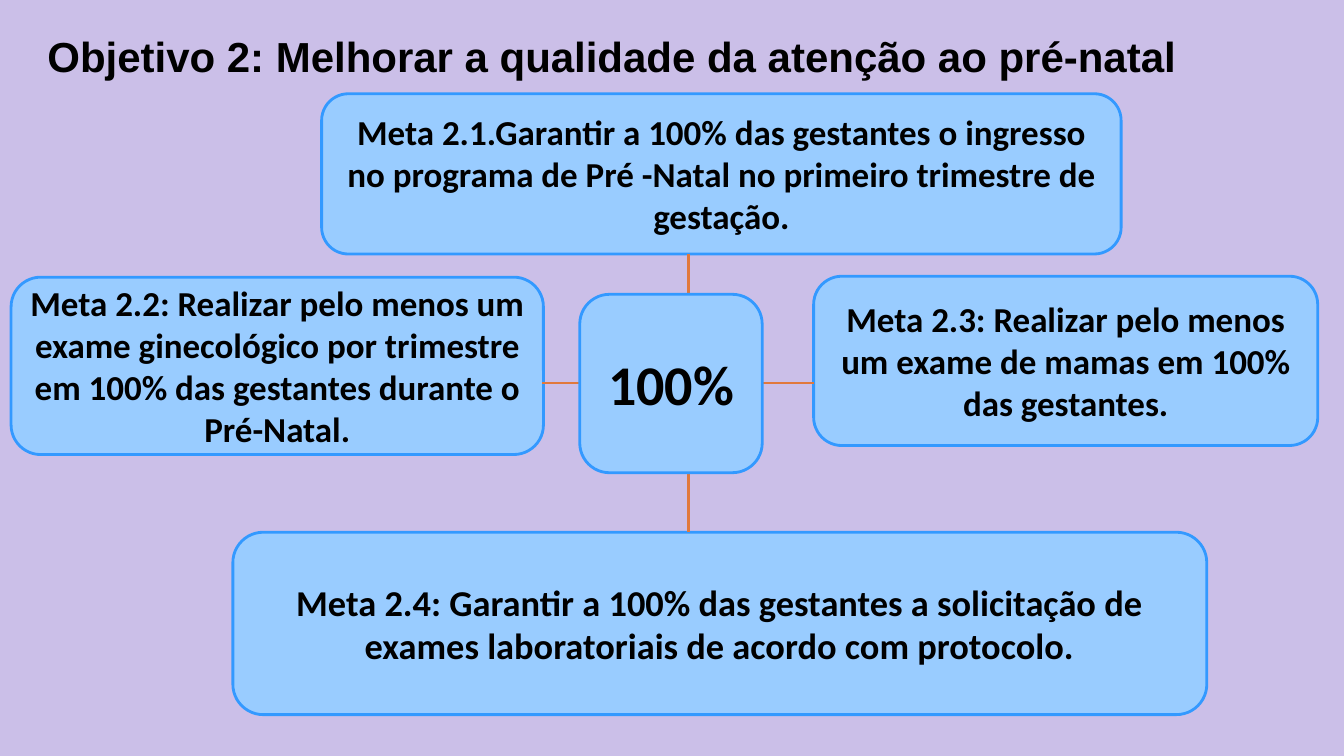
import pptx
import pptx.dml.color
import pptx.enum.shapes
import pptx.enum.text
import pptx.oxml.ns
import pptx.util
from lxml import etree
from pptx.util import Inches

COLOURS = {
    "background": "CBBFE8",
    "box": "99CCFF",
    "border": "3399FF",
    "link": "E1793C",
    "text": "000000",
}
LINE_WIDTH = pptx.util.Pt(2)

TITLE = "Objetivo 2: Melhorar a qualidade da atenção ao pré-natal"
# left, top, width, height, text size, text
GOALS = [
    (3.19, 0.93, 7.93, 1.59, 25,
     "Meta 2.1.Garantir a 100% das gestantes o ingresso no programa de "
     "Pré -Natal no primeiro trimestre de gestação."),
    (0.11, 2.75, 5.28, 1.76, 25,
     "Meta 2.2: Realizar pelo menos um exame ginecológico por trimestre em "
     "100% das gestantes durante o Pré-Natal."),
    (8.07, 2.74, 5, 1.68, 25,
     "Meta 2.3: Realizar pelo menos um exame de mamas em 100% das gestantes."),
    (2.31, 5.28, 9.66, 1.81, 26,
     "Meta 2.4: Garantir a 100% das gestantes a solicitação de exames "
     "laboratoriais de acordo com protocolo."),
]
CENTRE = (5.75, 2.92, 1.81, 1.77, 40, "100%")
# start x, start y, end x, end y
LINKS = [(5.38, 3.8, 8.07, 3.8), (6.83, 2.52, 6.83, 5.28)]


def colour(name):
    return pptx.dml.color.RGBColor.from_string(COLOURS[name])


def set_values(target, values):
    for name, value in values.items():
        setattr(target, name, value)


def write_text(shape, text, size, font, paragraph_format, frame_format):
    frame = shape.text_frame
    set_values(frame, {"word_wrap": True, **frame_format})
    para = frame.paragraphs[0]
    set_values(para, paragraph_format)
    span = para.add_run()
    span.text = text
    set_values(span.font, {"name": font, "size": pptx.util.Pt(size), "bold": True})
    span.font.color.rgb = colour("text")


def set_title(page):
    title = page.shapes.title
    set_values(title, {"left": Inches(0.37), "top": Inches(0),
                       "width": Inches(12.6), "height": Inches(0.76)})
    write_text(
        title, TITLE, 30, "Arial",
        {"alignment": pptx.enum.text.PP_ALIGN.LEFT, "line_spacing": 1.5},
        {"vertical_anchor": pptx.enum.text.MSO_ANCHOR.TOP,
         "auto_size": pptx.enum.text.MSO_AUTO_SIZE.NONE},
    )


def add_box(page, left, top, width, height, size, text):
    box = page.shapes.add_shape(
        pptx.enum.shapes.MSO_SHAPE.ROUNDED_RECTANGLE,
        Inches(left), Inches(top), Inches(width), Inches(height))
    box.shadow.inherit = False
    box.fill.solid()
    box.fill.fore_color.rgb = colour("box")
    box.line.color.rgb = colour("border")
    box.line.width = LINE_WIDTH
    write_text(
        box, text, size, "Calibri",
        {"alignment": pptx.enum.text.PP_ALIGN.CENTER},
        {"vertical_anchor": pptx.enum.text.MSO_ANCHOR.MIDDLE},
    )


def add_link(page, *ends):
    link = page.shapes.add_connector(
        pptx.enum.shapes.MSO_CONNECTOR.STRAIGHT, *map(Inches, ends))
    link.line.color.rgb = colour("link")
    link.line.width = LINE_WIDTH
    etree.SubElement(link._element.spPr, pptx.oxml.ns.qn("a:effectLst"))


def main():
    deck = pptx.Presentation()
    deck.slide_width, deck.slide_height = Inches(13.33), Inches(7.5)
    page = deck.slides.add_slide(deck.slide_layouts.get_by_name("Title Only"))
    page.background.fill.solid()
    page.background.fill.fore_color.rgb = colour("background")

    set_title(page)
    for goal in GOALS:
        add_box(page, *goal)
    for link in LINKS:
        add_link(page, *link)
    add_box(page, *CENTRE)
    deck.save("out.pptx")


if __name__ == "__main__":
    main()
